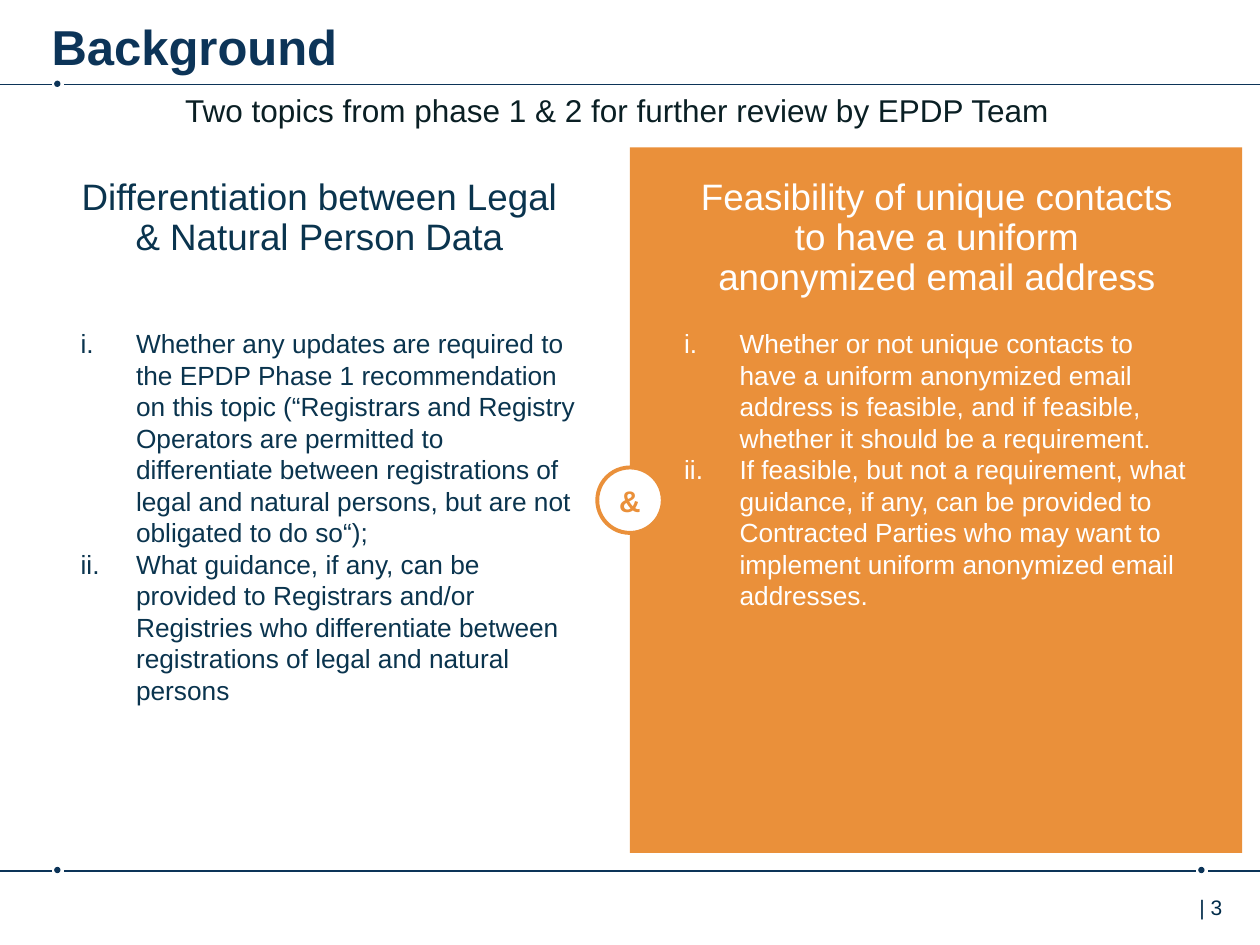
from lxml import etree
from pptx import Presentation
from pptx import util as u
from pptx.dml.color import RGBColor
from pptx.enum import shapes, text
from pptx.oxml.ns import qn

NAVY = RGBColor(0x0C, 0x34, 0x58)
INK = RGBColor(0x0A, 0x34, 0x4E)
DARK = RGBColor(0x0A, 0x1F, 0x24)
BLUE = RGBColor(0x00, 0x2B, 0x49)
ORANGE = RGBColor(0xEA, 0x90, 0x3A)
WHITE = RGBColor(0xFF, 0xFF, 0xFF)
KIND = shapes.MSO_SHAPE
ALIGN = text.PP_ALIGN
ANCHOR = text.MSO_ANCHOR


class Deck:
    font = "Arial"

    def __init__(self, slide):
        self.slide = slide

    def shape(self, kind, box, fill, edge=None):
        item = self.slide.shapes.add_shape(kind, *map(u.Inches, box))
        item.shadow.inherit = False
        item.fill.solid()
        item.fill.fore_color.rgb = fill
        if edge:
            item.line.color.rgb = edge
            item.line.width = u.Pt(2.25)
        else:
            item.line.fill.background()
        return item

    def line(self, start, end, y):
        item = self.slide.shapes.add_connector(
            shapes.MSO_CONNECTOR.STRAIGHT,
            u.Inches(start), u.Inches(y), u.Inches(end), u.Inches(y))
        item.line.color.rgb = NAVY
        item.line.width = u.Pt(1)
        etree.SubElement(item._element.spPr, qn("a:effectLst"))

    def rule(self, y, dots):
        start = 0
        for x in dots:
            self.shape(KIND.OVAL, (x - 0.03, y - 0.03, 0.05, 0.05), NAVY)
            self.line(start, x - 0.05, y)
            start = x + 0.05
        self.line(start, 10, y)

    def words(self, item, lines, size, color, align=ALIGN.LEFT,
              bold=False, space=None, roman=False, top=0):
        frame = item.text_frame
        frame.word_wrap = True
        frame.margin_left = frame.margin_right = frame.margin_bottom = 0
        frame.margin_top = u.Inches(top)
        frame.text = "\n".join(lines)
        for para in frame.paragraphs:
            para.alignment = align
            para.line_spacing = space
            if roman:
                props = para._p.get_or_add_pPr()
                indent = u.Inches(0.44)
                props.set("marL", str(indent))
                props.set("indent", str(-indent))
                etree.SubElement(props, qn("a:buFont"), typeface="+mj-lt")
                etree.SubElement(props, qn("a:buAutoNum"), type="romanLcPeriod")
            for run in para.runs:
                run.font.name = self.font
                run.font.size = u.Pt(size)
                run.font.bold = bold
                run.font.color.rgb = color

    def label(self, box, lines, size, color, **style):
        item = self.slide.shapes.add_textbox(*map(u.Inches, box))
        self.words(item, lines, size, color, **style)

    def badge(self, box, mark):
        item = self.shape(KIND.OVAL, box, WHITE, ORANGE)
        item.text_frame.vertical_anchor = ANCHOR.MIDDLE
        self.words(item, [mark], 17, ORANGE, align=ALIGN.CENTER, bold=True)

    def topic(self, head, body, title, points, color):
        left, width = head
        self.label((left, 1.42, width, 1.15), [title], 21, color,
                   align=ALIGN.CENTER, space=0.9)
        self.label((body, 2.6, 4, 1.4), points, 15, color, roman=True)


def main():
    prs = Presentation()
    prs.slide_width = u.Inches(10)
    prs.slide_height = u.Inches(7.5)
    deck = Deck(prs.slides.add_slide(prs.slide_layouts[6]))

    deck.rule(0.67, [0.46])
    deck.rule(6.91, [0.46, 9.54])
    deck.label((9.52, 7.05, 0.4, 0.4), ["| 3"], 12, BLUE, top=0.05)
    deck.label((0.41, 0.05, 8.76, 0.49), ["Background"], 28, NAVY,
               bold=True, top=0.08)
    deck.label((1.47, 0.72, 8.28, 0.3),
               ["Two topics from phase 1 & 2 for further review by EPDP Team"],
               18, DARK)

    deck.shape(KIND.RECTANGLE, (5, 1.17, 4.86, 5.6), ORANGE)
    deck.badge((4.74, 3.71, 0.52, 0.52), "&")
    deck.topic((0.55, 3.97), 0.64,
               "Differentiation between Legal & Natural Person Data", [
                   "Whether any updates are required to the EPDP Phase 1 "
                   "recommendation on this topic (“Registrars and Registry "
                   "Operators are permitted to differentiate between "
                   "registrations of legal and natural persons, but are not "
                   "obligated to do so“);",
                   "What guidance, if any, can be provided to Registrars "
                   "and/or Registries who differentiate between "
                   "registrations of legal and natural persons",
               ], INK)
    deck.topic((5.49, 3.89), 5.43,
               "Feasibility of unique contacts to have a uniform "
               "anonymized email address", [
                   "Whether or not unique contacts to have a uniform "
                   "anonymized email address is feasible, and if feasible, "
                   "whether it should be a requirement.",
                   "If feasible, but not a requirement, what guidance, if "
                   "any, can be provided to Contracted Parties who may want "
                   "to implement uniform anonymized email addresses.",
               ], WHITE)
    prs.save("out.pptx")


if __name__ == "__main__":
    main()
